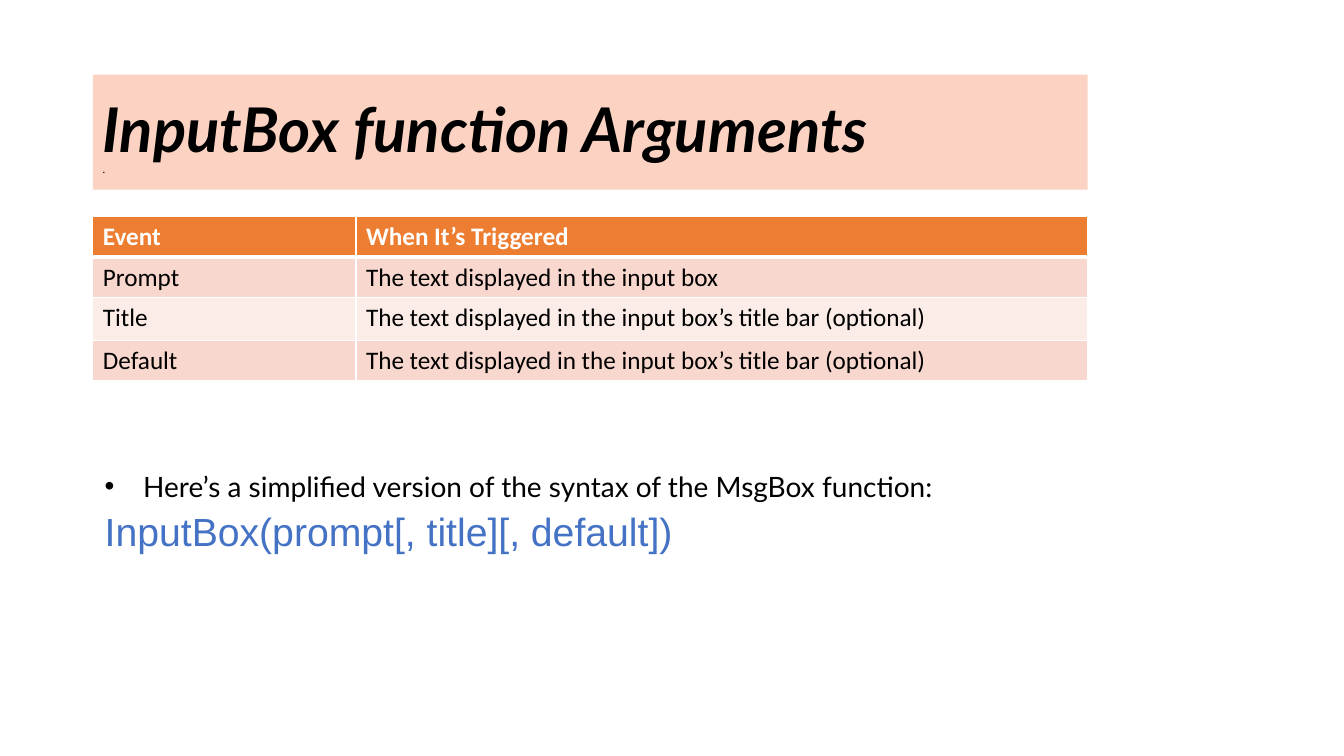
from lxml import etree
from pptx import Presentation
from pptx.dml.color import RGBColor
from pptx.enum.text import MSO_ANCHOR
from pptx.oxml.ns import qn
from pptx.util import Cm, Pt

MIDDLE = MSO_ANCHOR.MIDDLE
TOP = MSO_ANCHOR.TOP
BLACK = RGBColor(0x00, 0x00, 0x00)
WHITE = RGBColor(0xFF, 0xFF, 0xFF)
BLUE = RGBColor(0x44, 0x72, 0xC4)
ORANGE = RGBColor(0xED, 0x7D, 0x31)
PEACH = RGBColor(0xFC, 0xD3, 0xC2)
ROSE = RGBColor(0xF8, 0xD7, 0xCE)
BLUSH = RGBColor(0xFC, 0xEC, 0xE8)

LEFT = 2.34
COLUMN_WIDTHS = (6.63, 18.44)
ROW_HEIGHTS = (0.97, 0.99, 1.09, 0.97)
ARGUMENTS = (
    ("Event", "When It’s Triggered"),
    ("Prompt", "The text displayed in the input box"),
    ("Title", "The text displayed in the input box’s title bar (optional)"),
    ("Default", "The text displayed in the input box’s title bar (optional)"),
)


def write(paragraph, text, font="Lato", size=18, color=BLACK, bold=False,
          italic=False, line_spacing=None, before=None, bullet_indent=None):
    if bullet_indent is not None:
        properties = paragraph._p.get_or_add_pPr()
        indent = Cm(bullet_indent)
        properties.set("marL", str(indent))
        properties.set("indent", str(-indent))
        etree.SubElement(properties, qn("a:buFont"), typeface="Arial")
        etree.SubElement(properties, qn("a:buChar"), char="•")
    if line_spacing is not None:
        paragraph.line_spacing = line_spacing
    if before is not None:
        paragraph.space_before = Pt(before)
    span = paragraph.add_run()
    span.text = text
    span.font.name = font
    span.font.size = Pt(size)
    span.font.color.rgb = color
    span.font.bold = bold
    span.font.italic = italic


class SlideBuilder:
    """Draws styled text boxes and tables on one slide."""

    def __init__(self, page):
        self.page = page

    def text_box(self, left, top, width, height, anchor=TOP, fill=None):
        box = self.page.shapes.add_textbox(Cm(left), Cm(top), Cm(width), Cm(height))
        if fill is not None:
            box.fill.solid()
            box.fill.fore_color.rgb = fill
        frame = box.text_frame
        frame.word_wrap = True
        frame.vertical_anchor = anchor
        return frame

    def border(self, cell, side, width):
        properties = cell._tc.get_or_add_tcPr()
        line = etree.SubElement(properties, qn(f"a:ln{side}"), w=str(Pt(width)))
        solid = etree.SubElement(line, qn("a:solidFill"))
        etree.SubElement(solid, qn("a:srgbClr"), val=str(WHITE))

    def table(self, left, top, widths, heights, rows):
        table = self.page.shapes.add_table(
            len(rows), len(widths), Cm(left), Cm(top),
            Cm(sum(widths)), Cm(sum(heights))).table
        for column, width in zip(table.columns, widths):
            column.width = Cm(width)
        for index, (height, texts) in enumerate(zip(heights, rows)):
            table.rows[index].height = Cm(height)
            header = index == 0
            fill = ORANGE if header else (BLUSH, ROSE)[index % 2]
            for cell, text in zip(table.rows[index].cells, texts):
                self.border(cell, "L", 1)
                self.border(cell, "R", 1)
                self.border(cell, "T", 3 if index == 1 else 1)
                self.border(cell, "B", 3 if header else 1)
                cell.fill.solid()
                cell.fill.fore_color.rgb = fill
                write(cell.text_frame.paragraphs[0], text, font="Calibri",
                      color=WHITE if header else BLACK, bold=header)


def main():
    deck = Presentation()
    deck.slide_width, deck.slide_height = Cm(33.87), Cm(19.05)
    builder = SlideBuilder(deck.slides.add_slide(deck.slide_layouts[6]))

    title = builder.text_box(LEFT, 1.88, sum(COLUMN_WIDTHS), 2.9, MIDDLE, PEACH)
    write(title.paragraphs[0], "InputBox function Arguments", size=44,
          bold=True, italic=True, line_spacing=0.9)

    body = builder.text_box(LEFT, 3.96, 29.21, 13.21)
    write(body.paragraphs[0], ".", size=8)

    syntax = builder.text_box(2.39, 11.79, 24.99, 7.11)
    write(syntax.paragraphs[0],
          "Here’s a simplified version of the syntax of the MsgBox function:",
          size=20, line_spacing=0.9, bullet_indent=0.97)
    write(syntax.add_paragraph(), "InputBox(prompt[, title][, default])",
          font="Arial", size=28, color=BLUE, line_spacing=0.9, before=6.5)

    builder.table(LEFT, 5.46, COLUMN_WIDTHS, ROW_HEIGHTS, ARGUMENTS)
    deck.save("out.pptx")


if __name__ == "__main__":
    main()
